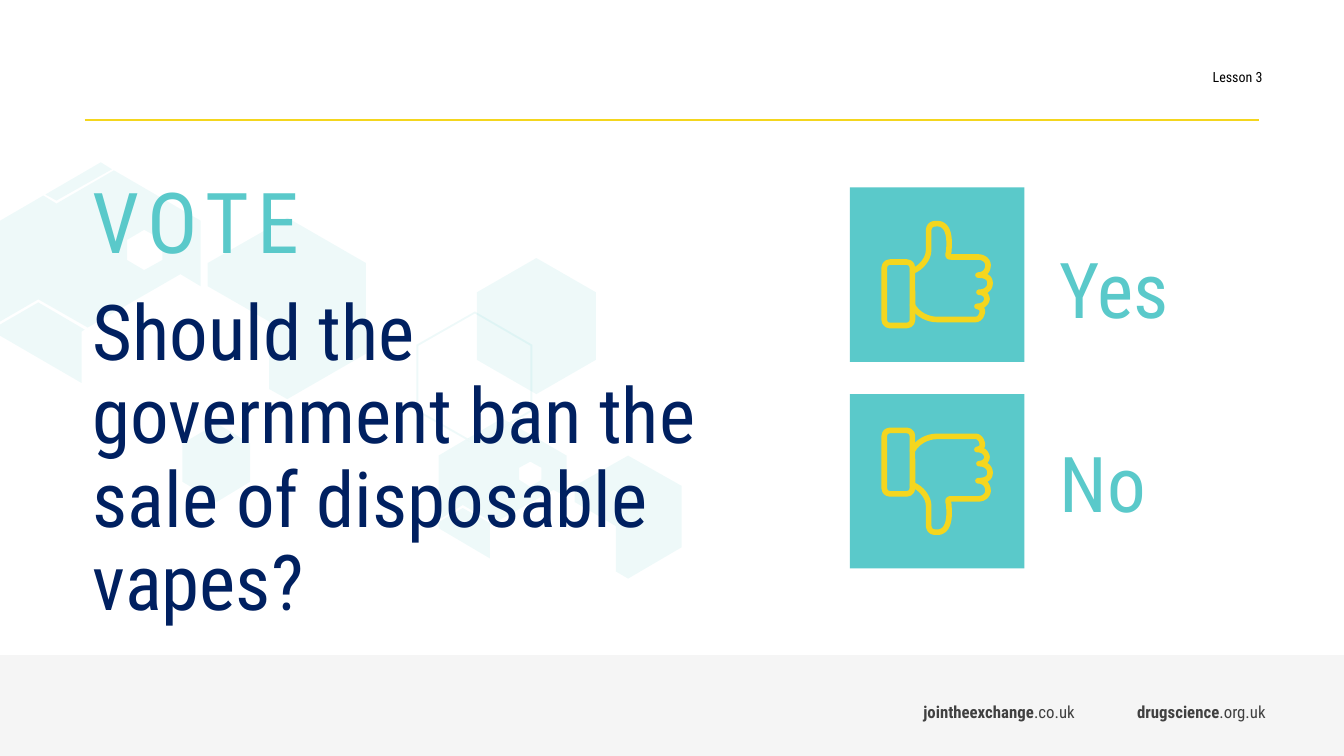
from pptx import Presentation
from pptx.dml import color
from pptx.enum import shapes, text
from pptx.oxml import ns
from pptx.util import Inches, Pt
from lxml import etree

TEAL, YELLOW, NAVY, GREY = "5AC9CA", "F4D61E", "002060", "404040"


def paint(fill, tone, opacity=100):
    fill.solid()
    fill.fore_color.rgb = color.RGBColor.from_string(tone)
    if opacity < 100:
        srgb = fill._xPr.find(".//" + ns.qn("a:srgbClr"))
        etree.SubElement(srgb, ns.qn("a:alpha"), val=str(opacity * 1000))


def trace(contours, closed):
    scaled = [[(Inches(x), Inches(y)) for x, y in points] for points in contours]
    builder = page.shapes.build_freeform(*scaled[0][0])
    for number, points in enumerate(scaled):
        if number:
            builder.move_to(*points[0])
        builder.add_line_segments(points[1:], close=closed)
    outline = builder.convert_to_shape()
    outline.shadow.inherit = False
    return outline


deck = Presentation()
deck.slide_width, deck.slide_height = Inches(13.33), Inches(7.5)
page = deck.slides.add_slide(deck.slide_layouts[1])
title, question = page.placeholders

footer = page.shapes.add_shape(
    shapes.MSO_SHAPE.RECTANGLE, 0, Inches(6.5), Inches(13.33), Inches(1))
footer.shadow.inherit = False
paint(footer.fill, "F2F2F2", 75)
footer.line.fill.background()

rule = page.shapes.add_connector(
    shapes.MSO_CONNECTOR.STRAIGHT, Inches(0.84), Inches(1.19), Inches(12.49), Inches(1.19))
paint(rule.line.fill, YELLOW)
rule.line.width = Pt(1)
etree.SubElement(rule._element.spPr, ns.qn("a:effectLst"))

hexagons = [
    [[(4.71, 3.09), (4.13, 3.42), (4.13, 4.08), (4.62, 4.36), (4.71, 4.41), (5.07, 4.2),
      (5.28, 4.08), (5.28, 3.42)],
     [(4.64, 4.35), (4.15, 4.07), (4.15, 3.43), (4.71, 3.11), (5.26, 3.43), (5.26, 4.07),
      (5.05, 4.19), (4.71, 4.39)]],
    [[(6.76, 4.82), (6.76, 5.43), (6.23, 5.74), (6.11, 5.67), (6.11, 5.22), (5.7, 4.98),
      (5.7, 4.82), (6.23, 4.52)]],
    [[(4.98, 4.15), (4.64, 4.35), (4.71, 4.39), (5.05, 4.19)],
     [(5.07, 4.2), (4.71, 4.41), (4.62, 4.36), (4.35, 4.52), (4.35, 5.16), (4.59, 5.01),
      (4.9, 5.19), (5.49, 4.86), (5.62, 4.93), (5.62, 4.52)],
     [(5.26, 4.83), (5.15, 4.76), (5.15, 4.64), (5.26, 4.58), (5.37, 4.64), (5.37, 4.76)],
     [(4.59, 5.04), (4.35, 5.18), (4.35, 5.24), (4.86, 5.54), (4.86, 5.21), (4.88, 5.2)]],
    [[(5.32, 2.56), (4.73, 2.9), (4.73, 3.57), (5.32, 3.91), (5.91, 3.57), (5.91, 2.9)]],
    [[(0.84, 3.27), (0.81, 3.29), (0.81, 3.8), (0, 3.33), (0, 3.22), (0.38, 3)],
     [(1.61, 2.58), (1.61, 2.38), (1.43, 2.28), (1.26, 2.38), (1.26, 2.58), (1.43, 2.68)],
     [(1.99, 2.19), (1.99, 2.84), (1.79, 2.72), (0.87, 3.25), (0.38, 2.97), (0, 3.19),
      (0, 2.19), (0.43, 1.94), (0.56, 2.02), (1.13, 1.69)],
     [(1, 1.61), (1.11, 1.68), (0.56, 1.99), (0.45, 1.93)]],
    [[(2.15, 4.2), (2.48, 4.4), (2.48, 4.78), (2.15, 4.98), (1.81, 4.78), (1.81, 4.4)]],
    [[(2.85, 2.16), (2.06, 2.61), (2.06, 2.84), (2.67, 3.19), (2.67, 3.86), (2.85, 3.96),
      (3.63, 3.51), (3.63, 2.61)]],
]
for contours in hexagons:
    hexagon = trace(contours, True)
    paint(hexagon.fill, TEAL, 10)
    hexagon.line.fill.background()

hand_curves = [
    [(9.14, 2.66), (9.21, 2.56), (9.21, 2.49)],
    [(9.21, 2.43), (9.21, 2.36), (9.21, 2.3)],
    [(9.21, 2.23), (9.25, 2.22), (9.28, 2.22)],
    [(9.36, 2.21), (9.4, 2.27), (9.41, 2.35)],
    [(9.42, 2.42), (9.41, 2.47), (9.41, 2.5)],
    [(9.4, 2.53), (9.4, 2.55), (9.43, 2.55)],
    [(9.5, 2.55), (9.6, 2.55), (9.7, 2.55)],
    [(9.76, 2.55), (9.8, 2.59), (9.8, 2.63)],
    [(9.8, 2.69), (9.76, 2.73), (9.7, 2.73)],
    [(9.77, 2.73), (9.82, 2.75), (9.82, 2.81)],
    [(9.82, 2.86), (9.78, 2.9), (9.71, 2.9)],
    [(9.76, 2.9), (9.79, 2.93), (9.79, 2.97)],
    [(9.78, 3.01), (9.75, 3.04), (9.69, 3.04)],
    [(9.74, 3.05), (9.75, 3.08), (9.74, 3.11)],
    [(9.73, 3.15), (9.7, 3.17), (9.68, 3.17)],
    [(9.55, 3.17), (9.42, 3.17), (9.29, 3.17)],
    [(9.2, 3.17), (9.1, 3.12), (9.05, 3.03)],
]
hand = [(9.05, 2.69)]
for first, second, end in hand_curves:
    start = hand[-1]
    for step in range(1, 9):
        t = step / 8
        hand.append(tuple(
            (1 - t) ** 3 * a + 3 * (1 - t) ** 2 * t * b + 3 * (1 - t) * t * t * c + t ** 3 * d
            for a, b, c, d in zip(start, first, second, end)))

for tile_top, cuff_top, thumb in [
    (1.86, 2.6, hand),
    (3.91, 4.27, [(x, 7.5 - y) for x, y in hand]),
]:
    tile = page.shapes.add_shape(
        shapes.MSO_SHAPE.RECTANGLE, Inches(8.43), Inches(tile_top), Inches(1.73), Inches(1.73))
    tile.shadow.inherit = False
    paint(tile.fill, TEAL)
    tile.line.fill.background()
    cuff = page.shapes.add_shape(
        shapes.MSO_SHAPE.ROUNDED_RECTANGLE,
        Inches(8.77), Inches(cuff_top), Inches(0.28), Inches(0.63))
    cuff.adjustments[0] = 0.2
    cuff.shadow.inherit = False
    for stroke in (cuff, trace([thumb], False)):
        stroke.fill.background()
        paint(stroke.line.fill, YELLOW)
        stroke.line.width = Pt(4)
        line = stroke.line._get_or_add_ln()
        line.set("cap", "rnd")
        etree.SubElement(line, ns.qn("a:round"))

for placeholder in (title, question):
    placeholder.element.getparent().append(placeholder.element)

LEFT, RIGHT = text.PP_ALIGN.LEFT, text.PP_ALIGN.RIGHT
captions = [
    (None, (5.96, 0.63, 6.66, 0.27), [("Lesson 3", False)], 10, "000000", RIGHT, 1, 0.05),
    (None, (9.06, 6.86, 2.1, 0.4), [("jointheexchange", True), (".co.uk", False)],
     12, GREY, LEFT, 1, 0.1),
    (None, (11.18, 6.86, 2.1, 0.4), [("drugscience", True), (".org.uk", False)],
     12, GREY, LEFT, 1, 0.1),
    (question, (0.82, 2.87, 6.79, 3.29),
     [("Should the government ban the sale of disposable vapes?", False)],
     55, NAVY, LEFT, 0.9, 0.05),
    (title, (0.82, 1.74, 9.81, 0.89), [("VOTE", False)], 60, TEAL, LEFT, 0.9, 0.05),
    (None, (10.41, 2.45, 1.91, 0.86), [("Yes", False)], 55, TEAL, LEFT, 0.9, 0.05),
    (None, (10.41, 4.38, 1.91, 0.86), [("No", False)], 55, TEAL, LEFT, 0.9, 0.05),
]
for box, place, spans, size, tone, align, spacing, inset in captions:
    place = [Inches(length) for length in place]
    box = box or page.shapes.add_textbox(*place)
    box.left, box.top, box.width, box.height = place
    frame = box.text_frame
    frame.word_wrap = True
    frame.auto_size = text.MSO_AUTO_SIZE.NONE
    frame.vertical_anchor = text.MSO_ANCHOR.TOP
    frame.margin_top = frame.margin_bottom = Inches(inset)
    para = frame.paragraphs[0]
    para.alignment = align
    para.line_spacing = spacing
    para.space_before = Pt(0)
    for words, bold in spans:
        span = para.add_run()
        span.text = words
        span.font.name = "Roboto Condensed"
        span.font.size = Pt(size)
        span.font.bold = bold
        paint(span.font.fill, tone)

bullet = question.text_frame.paragraphs[0]._p.get_or_add_pPr()
bullet.set("marL", "0")
bullet.set("indent", "0")
etree.SubElement(bullet, ns.qn("a:buNone"))
title.text_frame.paragraphs[0].runs[0]._r.get_or_add_rPr().set("spc", "600")

deck.save("out.pptx")
